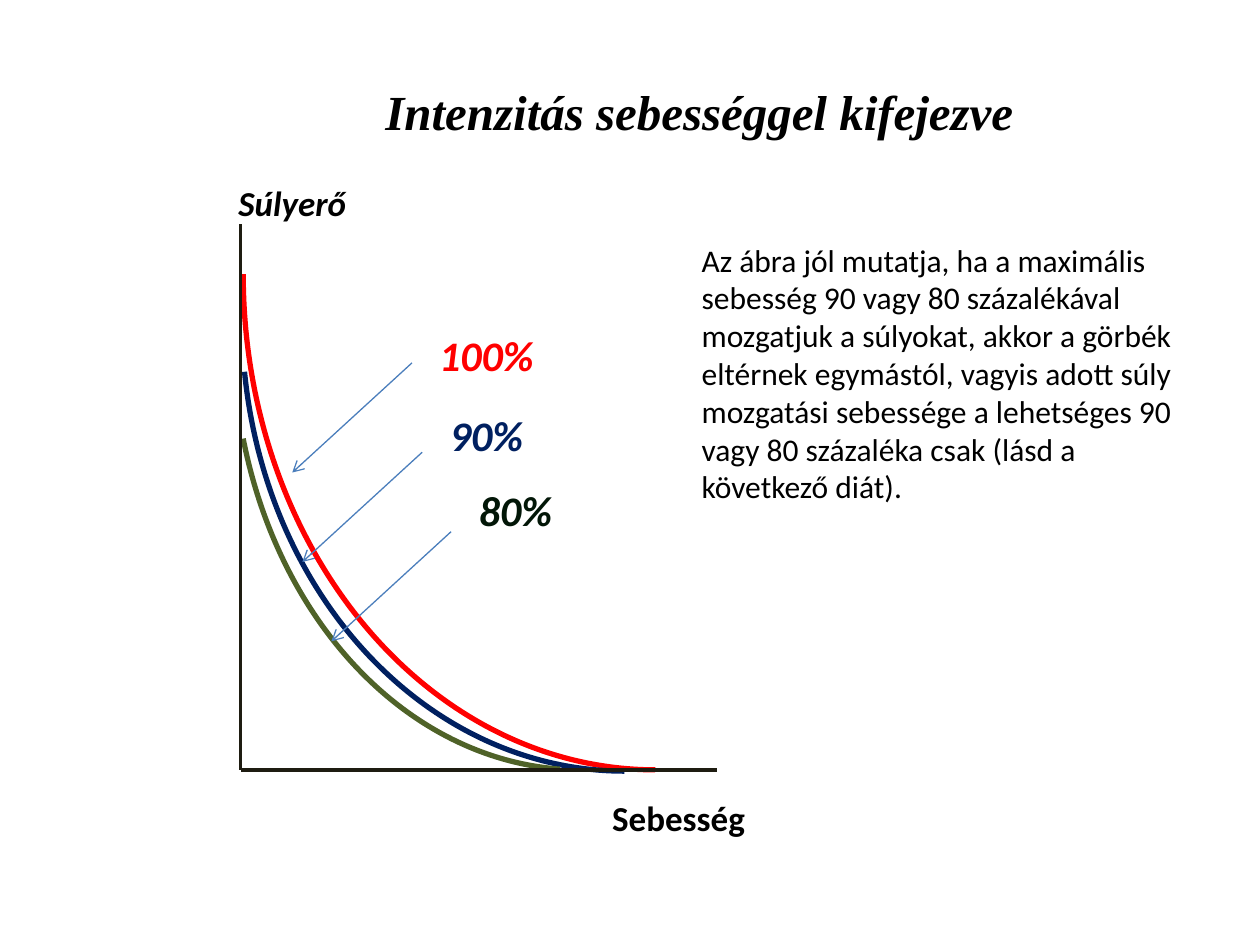
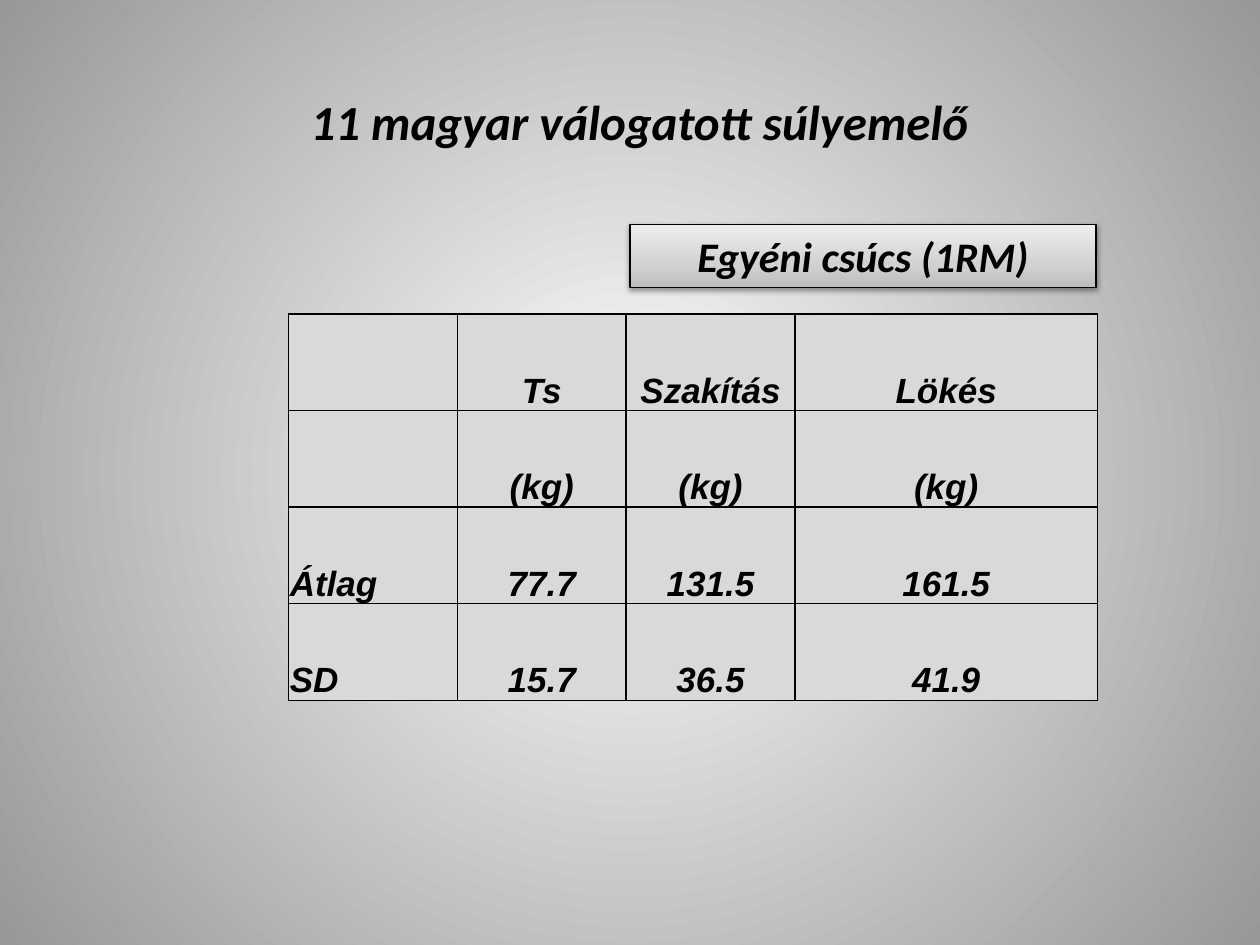
from dataclasses import dataclass, replace
from typing import Any

import pptx
import pptx.dml.color
import pptx.enum.dml
import pptx.enum.shapes
import pptx.enum.text
import pptx.oxml
import pptx.oxml.ns
import pptx.util

# Grid: 100 columns by 75 rows over a 10 x 7.5 inch slide
SLIDE_WIDTH = pptx.util.Inches(10)
SLIDE_HEIGHT = pptx.util.Inches(7.5)
COLUMN = SLIDE_WIDTH / 100
ROW = SLIDE_HEIGHT / 75

BLACK, RED, NAVY, GREEN = "000000", "FF0000", "002060", "4F6228"
AXIS_COLOR, ARROW_COLOR, DARK_GREEN, CELL_GRAY = "1E1C11", "4B7EBC", "021607", "D9D9D9"
LEFT = pptx.enum.text.PP_ALIGN.LEFT
CENTER = pptx.enum.text.PP_ALIGN.CENTER
XMLNS = pptx.oxml.ns.nsdecls("a")


@dataclass(frozen=True)
class Frame:
    left: float
    top: float
    width: float
    height: float

    def lengths(self) -> tuple[int, int, int, int]:
        return (round(self.left * COLUMN), round(self.top * ROW),
                round(self.width * COLUMN), round(self.height * ROW))


@dataclass(frozen=True)
class Style:
    size: float
    color: str = BLACK
    font: str = "Calibri"
    bold: bool = True
    italic: bool = True
    align: Any = CENTER


@dataclass(frozen=True)
class Curve:
    frame: Frame
    color: str
    start: float
    end: float


@dataclass(frozen=True)
class Callout:
    text: str
    color: str
    label: tuple[float, float]
    arrow: tuple[float, float]


TITLE = Style(28)
AXIS_LABEL = Style(20)
CALLOUT_LABEL = Style(24)
TABLE_TEXT = Style(20, font="Arial")
BODY = Style(18, bold=False, italic=False, align=LEFT)

CURVES = [
    Curve(Frame(19.3, -17.6, 65.4, 78.7), RED, 270, 0),
    Curve(Frame(19.2, -10.4, 60.7, 71.6), NAVY, 270, 352.25),
    Curve(Frame(18.5, -8, 55.1, 69.1), GREEN, 272.66, 342.85),
]
CALLOUTS = [
    Callout("100%", RED, (32.7, 25.7), (32.7, 28.8)),
    Callout("90%", NAVY, (32.7, 32), (33.5, 35.9)),
    Callout("80%", DARK_GREEN, (35, 38), (35.8, 42.2)),
]
ARROW_RUN, ARROW_DROP = -9.5, 8.7
ORIGIN = (19.1, 61.1)
AXIS_ENDS = [(19.1, 17.8), (56.9, 61.1)]

EXPLANATION = (
    "Az ábra jól mutatja, ha a maximális sebesség 90 vagy 80 százalékával "
    "mozgatjuk a súlyokat, akkor a görbék eltérnek egymástól, vagyis adott súly "
    "mozgatási sebessége a lehetséges 90 vagy 80 százaléka csak (lásd a következő diát)."
)
RESULTS = [
    ["", "Ts", "Szakítás", "Lökés"],
    ["", "(kg)", "(kg)", "(kg)"],
    ["Átlag", "77.7", "131.5", "161.5"],
    ["SD", "15.7", "36.5", "41.9"],
]
RESULT_COLUMNS = [13.4, 13.4, 13.4, 24]
RESULT_ROW = 7.67


# Shared helpers
def rgb(color: str) -> pptx.dml.color.RGBColor:
    return pptx.dml.color.RGBColor.from_string(color)


def assign(target: Any, values: dict[str, Any]) -> None:
    for name, value in values.items():
        setattr(target, name, value)


def write(frame: Any, text: str, style: Style) -> None:
    para = frame.paragraphs[0]
    para.alignment = style.align
    span = para.add_run()
    span.text = text
    assign(span.font, {"size": pptx.util.Pt(style.size), "name": style.font,
                       "bold": style.bold, "italic": style.italic})
    span.font.color.rgb = rgb(style.color)


def fit_text(shape: Any, text: str, style: Style) -> None:
    assign(shape.text_frame, {
        "word_wrap": True,
        "vertical_anchor": pptx.enum.text.MSO_ANCHOR.TOP,
        "auto_size": pptx.enum.text.MSO_AUTO_SIZE.SHAPE_TO_FIT_TEXT,
    })
    write(shape.text_frame, text, style)


def add_text(shapes: Any, text: str, frame: Frame, style: Style) -> None:
    fit_text(shapes.add_textbox(*frame.lengths()), text, style)


def add_page(deck: Any, title: str, frame: Frame, style: Style) -> Any:
    page = deck.slides.add_slide(deck.slide_layouts.get_by_name("Title Only"))
    names = ("left", "top", "width", "height")
    assign(page.shapes.title, dict(zip(names, frame.lengths())))
    fit_text(page.shapes.title, title, style)
    return page


def add_line(shapes: Any, start: tuple[float, float], end: tuple[float, float],
             color: str, weight: float, arrow: bool = False) -> None:
    line = shapes.add_connector(
        pptx.enum.shapes.MSO_CONNECTOR.STRAIGHT,
        round(start[0] * COLUMN), round(start[1] * ROW),
        round(end[0] * COLUMN), round(end[1] * ROW))
    line.line.color.rgb = rgb(color)
    line.line.width = pptx.util.Pt(weight)
    if arrow:
        outline = line.element.xpath(".//a:ln")[0]
        outline.append(pptx.oxml.parse_xml(f'<a:tailEnd {XMLNS} type="arrow"/>'))
    line.element.spPr.append(pptx.oxml.parse_xml(f"<a:effectLst {XMLNS}/>"))


def set_gradient(fill: Any, owner: Any, stops: dict[int, str], shade: str) -> None:
    """Give a fill its colour stops (percent to colour) and its direction."""
    fill.gradient()
    gradient = owner.xpath(".//a:gradFill")[0]
    for child in list(gradient):
        gradient.remove(child)
    marks = "".join(f'<a:gs pos="{share * 1000}"><a:srgbClr val="{color}"/></a:gs>'
                    for share, color in stops.items())
    gradient.append(pptx.oxml.parse_xml(f"<a:gsLst {XMLNS}>{marks}</a:gsLst>"))
    gradient.append(pptx.oxml.parse_xml(shade))


# Force and speed curves
def add_curve(shapes: Any, curve: Curve) -> None:
    arc = shapes.add_shape(pptx.enum.shapes.MSO_SHAPE.ARC, *curve.frame.lengths())
    arc.rotation = 180
    # An adjustment of 0.6 is one degree
    arc.adjustments[0] = curve.start * 0.6
    arc.adjustments[1] = curve.end * 0.6
    arc.shadow.inherit = False
    arc.fill.background()
    arc.line.color.rgb = rgb(curve.color)
    arc.line.width = pptx.util.Pt(3)


def add_callout(shapes: Any, callout: Callout) -> None:
    group = shapes.add_group_shape().shapes
    left, top = callout.arrow
    add_line(group, callout.arrow, (left + ARROW_RUN, top + ARROW_DROP),
             ARROW_COLOR, 0.75, arrow=True)
    add_text(group, callout.text, Frame(*callout.label, 11.8, 5),
             replace(CALLOUT_LABEL, color=callout.color))


def build_curve_page(deck: Any) -> None:
    page = add_page(deck, "Intenzitás sebességgel kifejezve", Frame(23.2, 6, 64.6, 5.7),
                    replace(TITLE, font="Times New Roman"))
    for curve in CURVES:
        add_curve(page.shapes, curve)
    axes = page.shapes.add_group_shape().shapes
    for end in AXIS_ENDS:
        add_line(axes, ORIGIN, end, AXIS_COLOR, 2)
    add_text(page.shapes, "Sebesség", Frame(47.6, 62.7, 15.7, 4.4),
             replace(AXIS_LABEL, italic=False, align=LEFT))
    for callout in CALLOUTS:
        add_callout(page.shapes, callout)
    add_text(page.shapes, "Súlyerő", Frame(12.2, 13.9, 22, 4.4), AXIS_LABEL)
    add_text(page.shapes, EXPLANATION, Frame(54.7, 18.6, 40.9, 22.2), BODY)


# Lifters' results
def format_cell(cell: Any, text: str, style: Style) -> None:
    cell.fill.solid()
    cell.fill.fore_color.rgb = rgb(CELL_GRAY)
    properties = cell._tc.get_or_add_tcPr()
    for position, side in enumerate("LRTB"):
        properties.insert(position, pptx.oxml.parse_xml(
            f'<a:ln{side} {XMLNS} w="12700"><a:solidFill><a:srgbClr val="{BLACK}"/>'
            f"</a:solidFill></a:ln{side}>"))
    if text:
        inset = pptx.util.Inches(0.01)
        assign(cell, {"margin_left": inset, "margin_right": inset, "margin_top": inset,
                      "margin_bottom": 0,
                      "vertical_anchor": pptx.enum.text.MSO_ANCHOR.BOTTOM})
        write(cell.text_frame, text, style)


def add_results(shapes: Any) -> None:
    frame = Frame(22.9, 24.9, sum(RESULT_COLUMNS), RESULT_ROW * len(RESULTS))
    table = shapes.add_table(len(RESULTS), len(RESULT_COLUMNS), *frame.lengths()).table
    assign(table, {"first_row": False, "horz_banding": False})
    for column, width in zip(table.columns, RESULT_COLUMNS):
        column.width = round(width * COLUMN)
    for row, texts in enumerate(RESULTS):
        for column, text in enumerate(texts):
            style = replace(TABLE_TEXT, align=CENTER if column else LEFT)
            format_cell(table.cell(row, column), text, style)


def add_record_label(shapes: Any) -> None:
    box = shapes.add_shape(pptx.enum.shapes.MSO_SHAPE.RECTANGLE,
                           *Frame(50, 17.8, 37, 5).lengths())
    set_gradient(box.fill, box.element, {0: "BDBDBD", 35: "D1D1D1", 100: "EEEEEE"},
                 f'<a:lin {XMLNS} ang="16200000" scaled="0"/>')
    box.line.color.rgb = rgb(BLACK)
    box.line.width = pptx.util.Pt(0.75)
    box.shadow.inherit = False
    box.element.xpath(".//a:effectLst")[0].append(pptx.oxml.parse_xml(
        f'<a:outerShdw {XMLNS} blurRad="{pptx.util.Pt(3.1)}" dist="{pptx.util.Pt(1.6)}" '
        f'dir="5400000" rotWithShape="0"><a:srgbClr val="{BLACK}">'
        '<a:alpha val="38000"/></a:srgbClr></a:outerShdw>'))
    fit_text(box, "Egyéni csúcs (1RM)", CALLOUT_LABEL)


def build_results_page(deck: Any) -> None:
    page = add_page(deck, "11 magyar válogatott súlyemelő",
                    Frame(11.4, 6.8, 78.7, 5.7), TITLE)
    set_gradient(page.background.fill, page.element, {0: "FFFFFF", 100: "979797"},
                 f'<a:path {XMLNS} path="circle">'
                 '<a:fillToRect l="50000" t="50000" r="50000" b="50000"/></a:path>')
    add_results(page.shapes)
    add_record_label(page.shapes)


def main() -> None:
    deck = pptx.Presentation()
    assign(deck, {"slide_width": SLIDE_WIDTH, "slide_height": SLIDE_HEIGHT})
    build_curve_page(deck)
    build_results_page(deck)
    deck.save("out.pptx")


if __name__ == "__main__":
    main()
